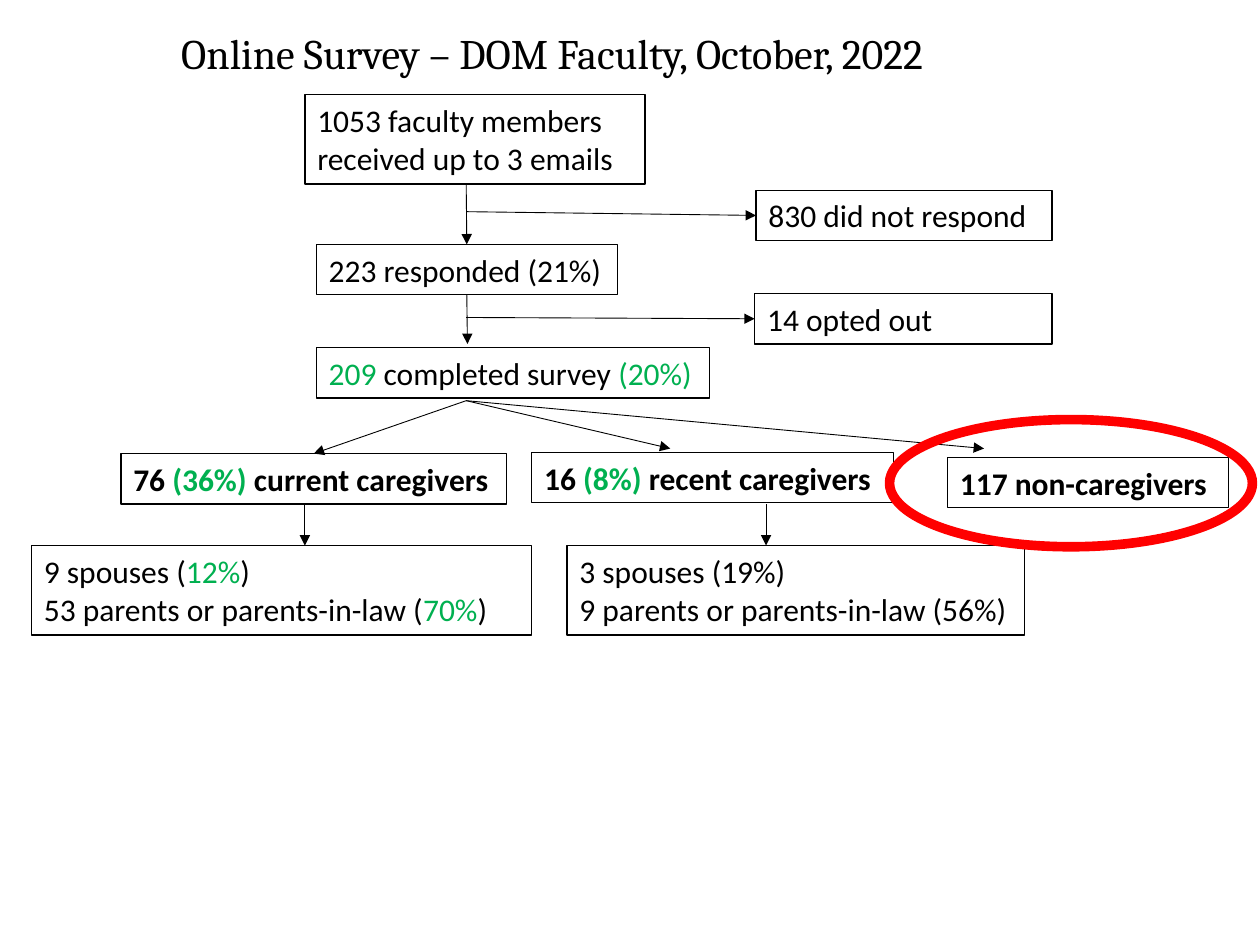
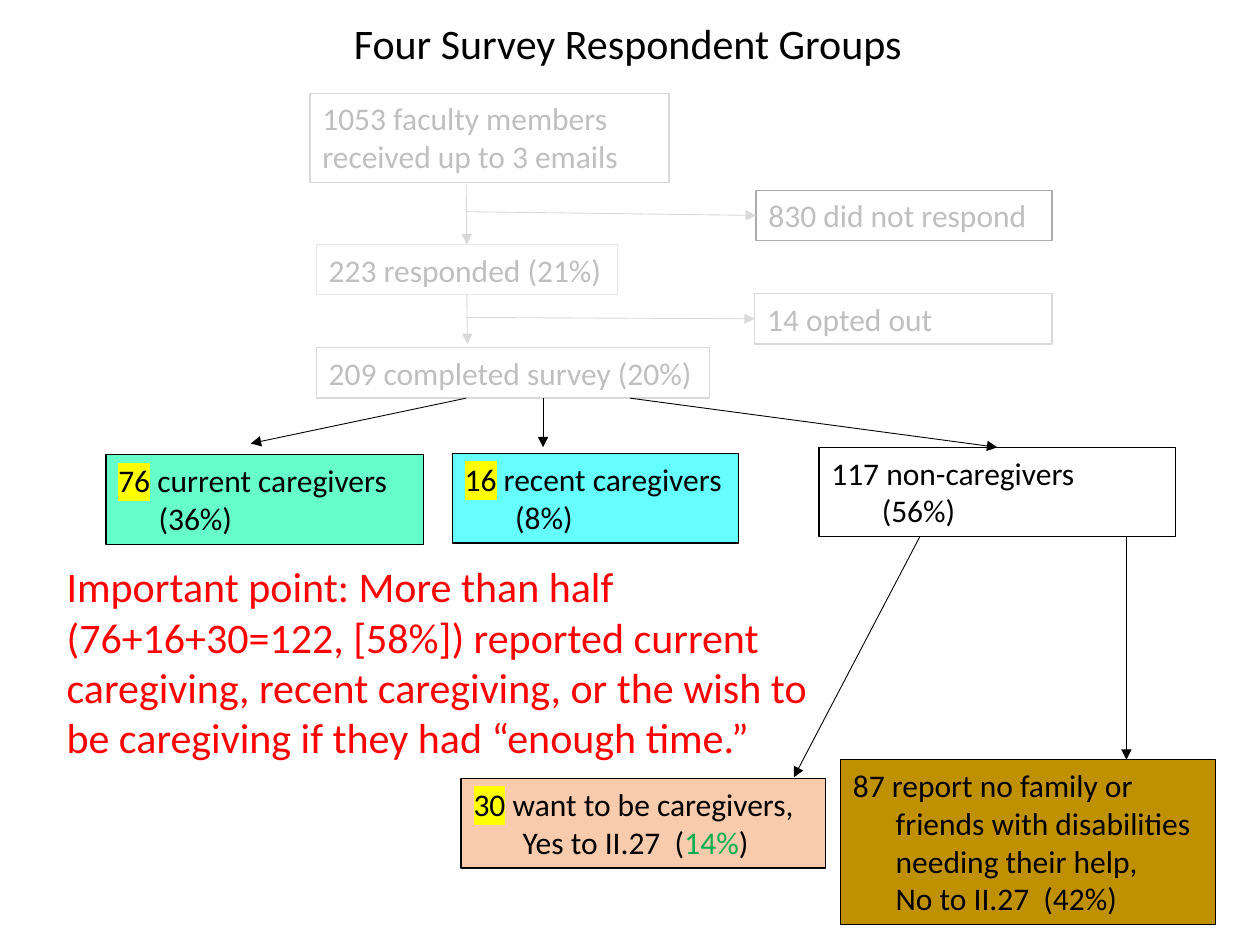
"""Build two slides that chart how surveyed faculty split into caregiver groups."""

import dataclasses
import typing

import pptx
import pptx.dml.color
import pptx.enum.shapes
import pptx.enum.text
import pptx.oxml.ns
import pptx.oxml.xmlchemy
import pptx.util
from lxml import etree

EMU_PER_PX = 9144
TOP, LEFT, BOTTOM = 0, 1, 2


@dataclasses.dataclass(frozen=True)
class Theme:
    body_font: str = "Calibri"
    serif_font: str = "Cambria"
    body_size: int = 18
    title_size: int = 24
    border_width: float = 0.75
    arrow_width: float = 0.5
    ring_width: float = 5.5
    ink: str = "000000"
    stat: str = "00B050"
    alert: str = "FF0000"
    marker: str = "FFFF00"
    faded_ink: str = "BFBFBF"
    faded_line: str = "D9D9D9"
    faded_light: str = "E7E6E6"
    faded_dark: str = "AFABAB"
    current: str = "66FFCC"
    recent: str = "66FFFF"
    willing: str = "F8CBAD"
    uninvolved: str = "BF9000"


THEME = Theme()


class Rect(typing.NamedTuple):
    left: int
    top: int
    width: int
    height: int


class Point(typing.NamedTuple):
    x: int
    y: int


class Joint(typing.NamedTuple):
    group: str
    side: int


class Span(typing.NamedTuple):
    text: str
    color: str | None = None
    marked: bool = False


class Line(typing.NamedTuple):
    spans: tuple[Span, ...]
    indent: int = 0


@dataclasses.dataclass(frozen=True)
class Box:
    group: str
    area: Rect
    lines: tuple[Line, ...]
    wrap: bool = True
    bold: bool = False
    ink: str = THEME.ink
    border: str | None = THEME.ink
    fill: str | None = None
    font: str = THEME.body_font
    size: int = THEME.body_size


class Arrow(typing.NamedTuple):
    start: Point | Joint
    end: Point | Joint
    color: str = THEME.ink


def px(length: int) -> int:
    return pptx.util.Emu(length * EMU_PER_PX)


def rgb(value: str) -> pptx.dml.color.RGBColor:
    return pptx.dml.color.RGBColor.from_string(value)


def plain(text: str, indent: int = 0) -> Line:
    return Line((Span(text),), indent)


def stat(text: str) -> Span:
    return Span(text, THEME.stat)


def marked(count: str, label: str) -> Line:
    return Line((Span(count, marked=True), Span(label)))


def write_line(paragraph, line: Line, box: Box) -> None:
    if line.indent:
        properties = paragraph._p.get_or_add_pPr()
        properties.set("marL", str(px(line.indent)))
        properties.set("indent", "0")
    paragraph.alignment = pptx.enum.text.PP_ALIGN.LEFT
    for span in line.spans:
        run = paragraph.add_run()
        run.text = span.text
        run.font.name = box.font
        run.font.size = pptx.util.Pt(box.size)
        run.font.bold = box.bold
        run.font.color.rgb = rgb(span.color or box.ink)
        if span.marked:
            solid = run._r.rPr.find(pptx.oxml.ns.qn("a:solidFill"))
            highlight = etree.Element(pptx.oxml.ns.qn("a:highlight"))
            color = etree.SubElement(highlight, pptx.oxml.ns.qn("a:srgbClr"))
            color.set("val", THEME.marker)
            solid.addnext(highlight)


def draw_box(slide, box: Box):
    area = [px(length) for length in box.area]
    if box.border:
        shape = slide.shapes.add_shape(
            pptx.enum.shapes.MSO_SHAPE.RECTANGLE, *area)
        shape.shadow.inherit = False
        shape.line.color.rgb = rgb(box.border)
        shape.line.width = pptx.util.Pt(THEME.border_width)
    else:
        shape = slide.shapes.add_textbox(*area)
    if box.fill:
        shape.fill.solid()
        shape.fill.fore_color.rgb = rgb(box.fill)
    else:
        shape.fill.background()
    frame = shape.text_frame
    frame.word_wrap = box.wrap
    frame.auto_size = pptx.enum.text.MSO_AUTO_SIZE.SHAPE_TO_FIT_TEXT
    frame.vertical_anchor = pptx.enum.text.MSO_ANCHOR.TOP
    for index, line in enumerate(box.lines):
        paragraph = frame.add_paragraph() if index else frame.paragraphs[0]
        write_line(paragraph, line, box)
    return shape


def draw_arrow(slide, arrow: Arrow, groups: dict) -> None:
    ends = [end if isinstance(end, Point) else Point(0, 0)
            for end in (arrow.start, arrow.end)]
    connector = slide.shapes.add_connector(
        pptx.enum.shapes.MSO_CONNECTOR.STRAIGHT,
        *(px(length) for end in ends for length in end))
    if isinstance(arrow.start, Joint):
        connector.begin_connect(groups[arrow.start.group], arrow.start.side)
    if isinstance(arrow.end, Joint):
        connector.end_connect(groups[arrow.end.group], arrow.end.side)
    connector.line.color.rgb = rgb(arrow.color)
    connector.line.width = pptx.util.Pt(THEME.arrow_width)
    outline = connector.line._get_or_add_ln()
    etree.SubElement(outline, pptx.oxml.ns.qn("a:tailEnd")).set("type", "triangle")
    etree.SubElement(connector._element.spPr, pptx.oxml.ns.qn("a:effectLst"))


def draw_ring(slide, area: Rect) -> None:
    ring = slide.shapes.add_shape(
        pptx.enum.shapes.MSO_SHAPE.OVAL, *(px(length) for length in area))
    ring.shadow.inherit = False
    ring.fill.background()
    ring.line.color.rgb = rgb(THEME.alert)
    ring.line.width = pptx.util.Pt(THEME.ring_width)


def headline(text: str, area: Rect, font: str = THEME.body_font,
             ink: str = THEME.ink) -> Box:
    return Box("headline", area, (plain(text),), border=None, ink=ink,
               font=font, size=THEME.title_size)


def draw_flow(presentation, boxes: typing.Iterable[Box],
              arrows: typing.Iterable[Arrow]):
    slide = presentation.slides.add_slide(presentation.slide_layouts[6])
    groups = {box.group: draw_box(slide, box) for box in boxes}
    for arrow in arrows:
        draw_arrow(slide, arrow, groups)
    return slide


FUNNEL = (
    Box("invited", Rect(242, 75, 270, 71),
        (plain("1053 faculty members received up to 3 emails"),)),
    Box("responded", Rect(251, 194, 239, 40),
        (plain("223 responded (21%)"),), wrap=False),
    Box("silent", Rect(600, 151, 235, 40),
        (plain("830 did not respond"),), wrap=False),
    Box("completed", Rect(251, 276, 312, 40),
        (Line((stat("209"), Span(" completed survey "), stat("(20%)"))),),
        wrap=False),
    Box("opted out", Rect(599, 233, 236, 40), (plain("14 opted out"),)),
)

FUNNEL_ARROWS = (
    Arrow(Point(370, 146), Joint("responded", TOP)),
    Arrow(Point(370, 168), Joint("silent", LEFT)),
    Arrow(Joint("responded", BOTTOM), Point(371, 273)),
    Arrow(Point(370, 252), Joint("opted out", LEFT)),
)

CAREGIVERS = (
    headline("Online Survey – DOM Faculty, October, 2022",
             Rect(134, 17, 796, 50), THEME.serif_font),
    Box("current", Rect(96, 360, 306, 40),
        (Line((Span("76 "), stat("(36%) "), Span("current caregivers"))),),
        bold=True),
    Box("recent", Rect(422, 359, 287, 40),
        (Line((Span("16 "), stat("(8%) "), Span("recent caregivers"))),),
        wrap=False, bold=True),
    Box("none", Rect(752, 363, 223, 40),
        (plain("117 non-caregivers"),), wrap=False, bold=True),
    Box("current kin", Rect(25, 433, 397, 71),
        (Line((Span("9 spouses ("), stat("12%"), Span(")"))),
         Line((Span("53 parents or parents-in-law ("), stat("70%"), Span(")"))))),
    Box("recent kin", Rect(450, 433, 363, 71),
        (plain("3 spouses (19%)"), plain("9 parents or parents-in-law (56%)"))),
)

SPLIT = Point(370, 318)
CAREGIVER_ARROWS = (
    Arrow(SPLIT, Joint("current", TOP)),
    Arrow(SPLIT, Point(532, 356)),
    Arrow(SPLIT, Point(781, 356)),
    *(Arrow(Point(x, 400), Point(x, 433)) for x in (242, 608)),
)

RESPONDENTS = (
    headline("Four Survey Respondent Groups", Rect(271, 9, 458, 50)),
    headline("Important point: More than half (76+16+30=122, [58%]) reported "
             "current caregiving, recent caregiving, or the wish to be "
             "caregiving if they had “enough time.”",
             Rect(43, 440, 618, 212), ink=THEME.alert),
    Box("current", Rect(84, 361, 252, 71),
        (marked("76", " current caregivers"), plain("(36%)", 32)),
        fill=THEME.current),
    Box("recent", Rect(359, 360, 227, 71),
        (marked("16", " recent caregivers"), plain("(8%)", 40)),
        fill=THEME.recent),
    Box("none", Rect(650, 355, 283, 71),
        (plain("117 non-caregivers"), plain("(56%)", 40))),
    Box("willing", Rect(366, 618, 289, 71),
        (marked("30", " want to be caregivers,"),
         Line((Span("Yes to II.27  ("), stat("14%"), Span(")")), 39)),
        fill=THEME.willing),
    Box("uninvolved", Rect(667, 603, 298, 131),
        (plain("87 report no family or"),
         *(plain(text, 34) for text in (
             "friends with disabilities", "needing their help,",
             "No to II.27  (42%)"))),
        fill=THEME.uninvolved),
)

RESPONDENT_ARROWS = (
    Arrow(Point(370, 316), Point(199, 352)),
    Arrow(Point(431, 316), Point(431, 355)),
    Arrow(Point(500, 316), Joint("none", TOP)),
    Arrow(Point(730, 426), Point(630, 617)),
    Arrow(Point(894, 425), Point(894, 603)),
)


def fade(box: Box) -> Box:
    borders = {"responded": THEME.faded_light, "silent": THEME.faded_dark}
    lines = tuple(plain("".join(span.text for span in line.spans))
                  for line in box.lines)
    area = Rect(246, 74, 285, 71) if box.group == "invited" else box.area
    return dataclasses.replace(
        box, area=area, lines=lines, ink=THEME.faded_ink,
        border=borders.get(box.group, THEME.faded_line))


def main() -> None:
    presentation = pptx.Presentation()
    presentation.slide_width = px(1000)
    presentation.slide_height = px(750)

    survey = draw_flow(presentation, FUNNEL + CAREGIVERS,
                       FUNNEL_ARROWS + CAREGIVER_ARROWS)
    draw_ring(survey, Rect(706, 333, 288, 101))

    faded_arrows = tuple(arrow._replace(color=THEME.faded_line)
                         for arrow in FUNNEL_ARROWS)
    draw_flow(presentation, tuple(map(fade, FUNNEL)) + RESPONDENTS,
              faded_arrows + RESPONDENT_ARROWS)
    presentation.save("out.pptx")


if __name__ == "__main__":
    main()
